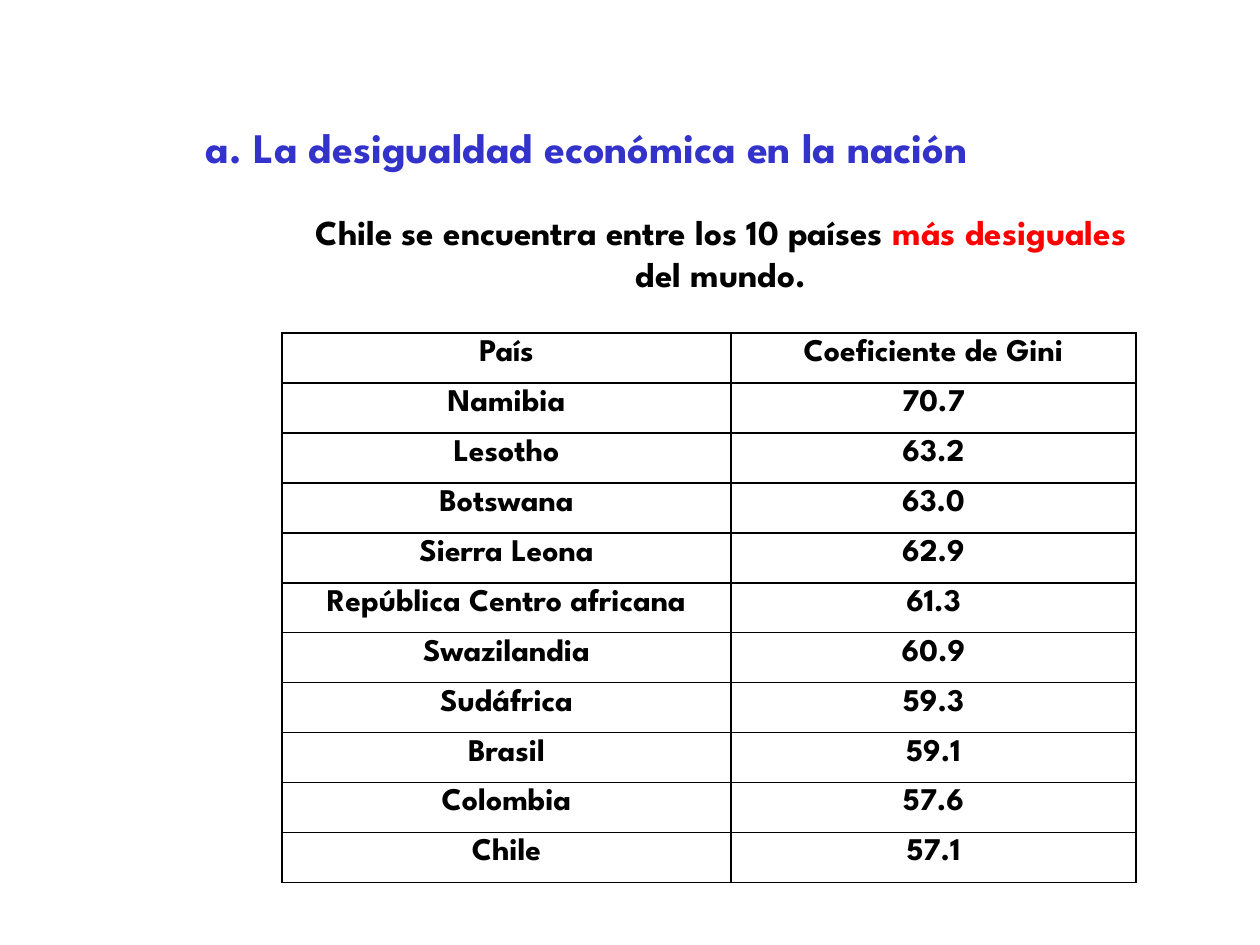
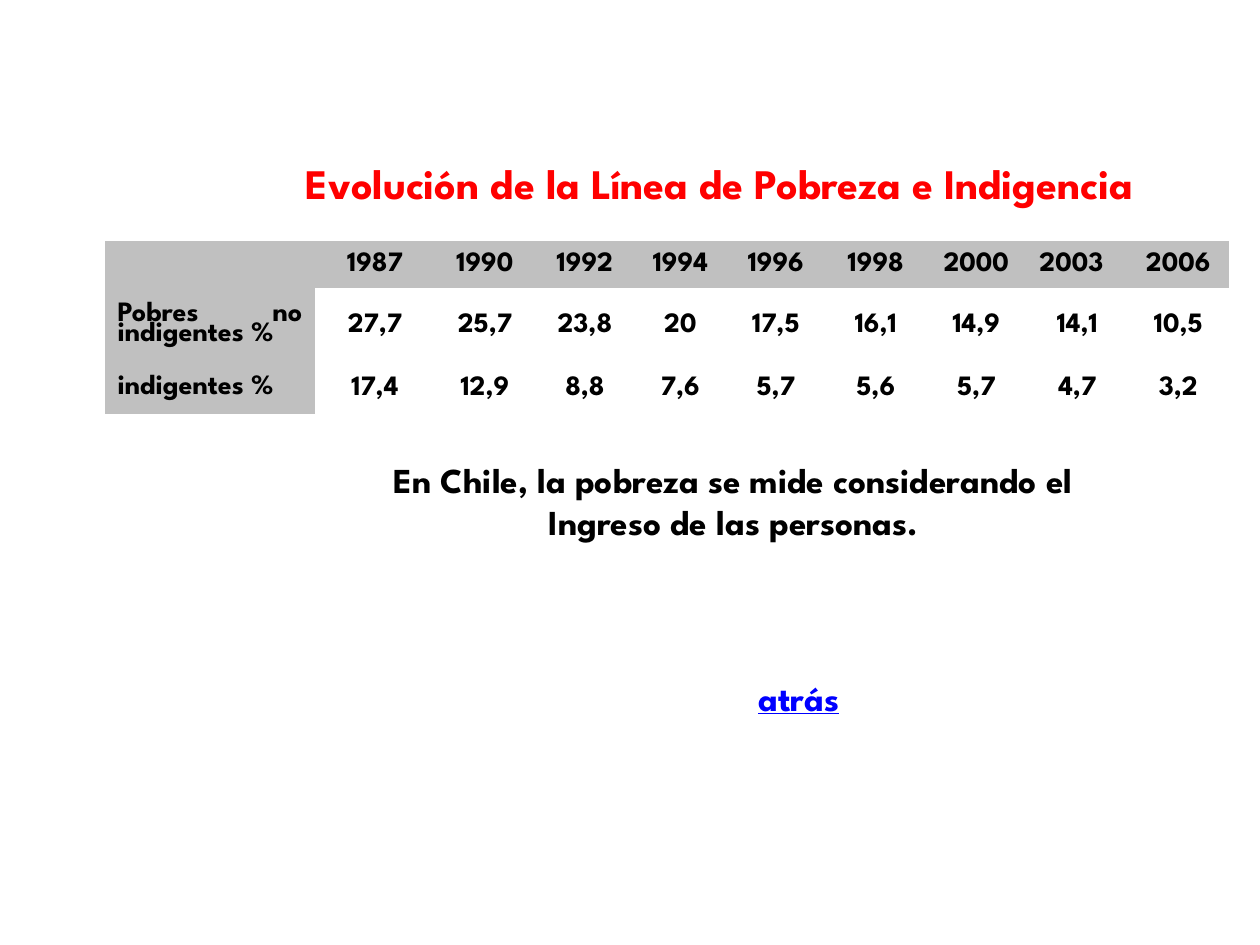
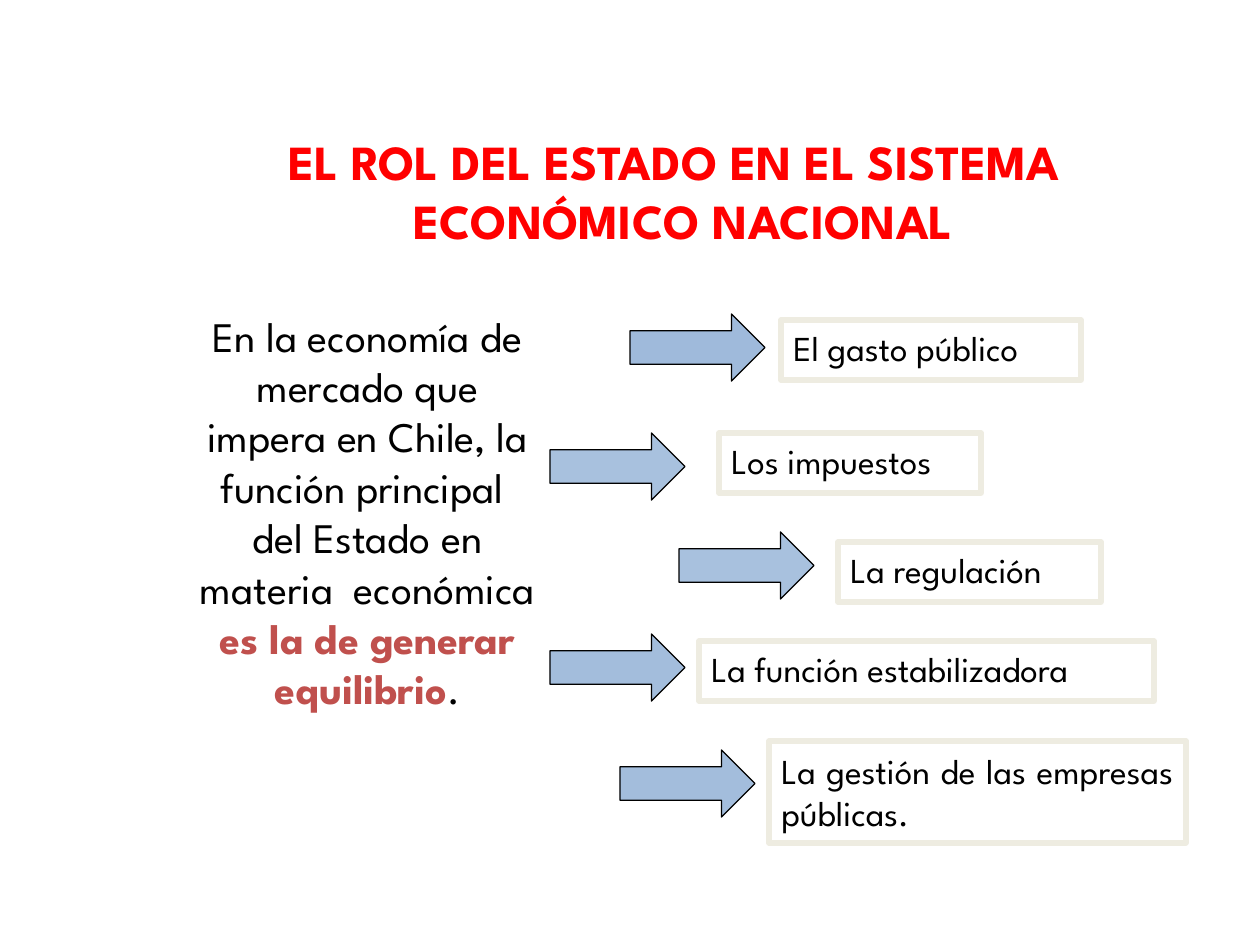
import pptx
import pptx.dml.color
import pptx.enum.shapes
import pptx.enum.text
import pptx.oxml
import pptx.oxml.ns
import pptx.util

ALIGN = pptx.enum.text.PP_ALIGN
ANCHOR = pptx.enum.text.MSO_ANCHOR
SHAPE = pptx.enum.shapes.MSO_SHAPE
LEFT, CENTER, JUSTIFY = ALIGN.LEFT, ALIGN.CENTER, ALIGN.JUSTIFY
TOP, MIDDLE = ANCHOR.TOP, ANCHOR.MIDDLE

# Shared look
FONT = "League Spartan"
BLACK, RED, INDIGO, LINK_BLUE = "000000", "FF0000", "3333CC", "0000FF"
GREY, CREAM, ARROW_BLUE, BRICK = "C0C0C0", "EEECE1", "4F81BD", "C0504D"
PX_PER_INCH = 126

# Content: a text is a list of paragraphs, a paragraph a list of (words, colour, format)
BOLD, PLAIN = {"bold": True}, {"bold": False}
LINK = {"bold": True, "underline": True}

INEQUALITY_TITLE = [[("La desigualdad económica en la nación", INDIGO, BOLD)]]
INEQUALITY_CLAIM = [
    [("Chile se encuentra entre los 10 países ", BLACK, BOLD), ("más desiguales", RED, BOLD)],
    [("del mundo.", BLACK, BOLD)],
]
GINI = [
    ("País", "Coeficiente de Gini"),
    ("Namibia", "70.7"),
    ("Lesotho", "63.2"),
    ("Botswana", "63.0"),
    ("Sierra Leona", "62.9"),
    ("República Centro africana", "61.3"),
    ("Swazilandia", "60.9"),
    ("Sudáfrica", "59.3"),
    ("Brasil", "59.1"),
    ("Colombia", "57.6"),
    ("Chile", "57.1"),
]

POVERTY_TITLE = [[("Evolución de la Línea de Pobreza e Indigencia", RED, BOLD)]]
POVERTY = [
    ("", "1987", "1990", "1992", "1994", "1996", "1998", "2000", "2003", "2006"),
    ("Pobres no indigentes %", "27,7", "25,7", "23,8", "20", "17,5", "16,1", "14,9", "14,1", "10,5"),
    ("indigentes %", "17,4", "12,9", "8,8", "7,6", "5,7", "5,6", "5,7", "4,7", "3,2"),
]
POVERTY_COLUMNS = (210, 120, 100, 100, 91, 100, 100, 101, 101, 101)
POVERTY_ROWS = (47, 75, 51)
POVERTY_NOTE = [
    [("En Chile, la pobreza se mide considerando el", BLACK, BOLD)],
    [("Ingreso de las personas.", BLACK, BOLD)],
]
BACK = [[("atrás", LINK_BLUE, LINK)]]

STATE_TITLE = [
    [("EL ROL DEL ESTADO EN EL SISTEMA", RED, BOLD)],
    [("ECONÓMICO NACIONAL", RED, BOLD)],
]
STATE_ROLE = [[
    ("En la economía de mercado que impera en Chile, la función principal  "
     "del Estado en materia  económica ", BLACK, PLAIN),
    ("es la de generar equilibrio", BRICK, BOLD),
    (".", BLACK, PLAIN),
]]
# Words, box place, arrow corner, arrow opacity in percent
STATE_TOOLS = [
    ("El gasto público", (781, 320, 300, 60), (630, 314), 54),
    ("Los impuestos", (719, 433, 262, 60), (550, 433), 49),
    ("La regulación", (838, 542, 263, 60), (679, 532), 49),
    ("La función estabilizadora", (699, 641, 455, 60), (550, 634), 52),
    ("La gestión de las empresas públicas.", (769, 741, 417, 102), (620, 750), 52),
]
ARROW_SIZE = (135, 67)


# Helpers
def px(length):
    return pptx.util.Emu(round(length * 914400 / PX_PER_INCH))


def rgb(colour):
    return pptx.dml.color.RGBColor.from_string(colour)


def assign(target, values):
    for name, value in values.items():
        setattr(target, name, value)


def add_xml(parent, tag, inner="", **attributes):
    listed = " ".join(f'{name}="{value}"' for name, value in attributes.items())
    namespace = pptx.oxml.ns.nsdecls("a")
    parent.append(pptx.oxml.parse_xml(f"<a:{tag} {namespace} {listed}>{inner}</a:{tag}>"))


def write(frame, paragraphs, size, align=CENTER, anchor=TOP):
    assign(frame, {"word_wrap": True, "vertical_anchor": anchor,
                   "auto_size": pptx.enum.text.MSO_AUTO_SIZE.NONE})
    for index, runs in enumerate(paragraphs):
        paragraph = frame.add_paragraph() if index else frame.paragraphs[0]
        paragraph.alignment = align
        for words, colour, style in runs:
            run = paragraph.add_run()
            run.text = words
            assign(run.font, {"name": FONT, "size": pptx.util.Pt(size), **style})
            run.font.color.rgb = rgb(colour)


def add_text(slide, place, paragraphs, size, align=CENTER):
    box = slide.shapes.add_textbox(*map(px, place))
    write(box.text_frame, paragraphs, size, align)


def add_titled_slide(deck, place, paragraphs, size, align=CENTER, anchor=MIDDLE):
    slide = deck.slides.add_slide(deck.slide_layouts[5])
    title = slide.shapes.title
    assign(title, dict(zip(("left", "top", "width", "height"), map(px, place))))
    write(title.text_frame, paragraphs, size, align, anchor)
    return slide


def set_borders(cell, width):
    line = f'<a:solidFill><a:srgbClr val="{BLACK}"/></a:solidFill>' if width else "<a:noFill/>"
    properties = cell._tc.get_or_add_tcPr()
    for side in ("lnL", "lnR", "lnT", "lnB"):
        add_xml(properties, side, line, w=pptx.util.Pt(width))


def add_grid(slide, corner, rows, widths, heights, size, border, anchor=TOP):
    grid = slide.shapes.add_table(
        len(rows), len(widths), *map(px, (*corner, sum(widths), sum(heights)))).table
    assign(grid, {"first_row": False, "horz_banding": False})
    for column, width in zip(grid.columns, widths):
        column.width = px(width)
    for row, height, words in zip(grid.rows, heights, rows):
        row.height = px(height)
        for cell, entry in zip(row.cells, words):
            if entry:
                write(cell.text_frame, [[(entry, BLACK, BOLD)]], size)
            else:
                assign(cell, {"margin_top": 0, "margin_bottom": 0})
            cell.vertical_anchor = anchor
            set_borders(cell, border)
            cell.fill.background()
    return grid


def add_outlined(slide, kind, place, colour, width):
    shape = slide.shapes.add_shape(kind, *map(px, place))
    shape.shadow.inherit = False
    shape.line.color.rgb = rgb(colour)
    shape.line.width = pptx.util.Pt(width)
    return shape


# Slides
def inequality_slide(deck):
    slide = add_titled_slide(deck, (193, 115, 942, 63), INEQUALITY_TITLE, 24, LEFT)
    properties = slide.shapes.title.text_frame.paragraphs[0]._p.get_or_add_pPr()
    assign_indent = {"marL": px(48), "indent": px(-48)}
    for name, value in assign_indent.items():
        properties.set(name, str(value))
    add_xml(properties, "buFont", typeface="+mj-lt")
    add_xml(properties, "buAutoNum", type="alphaLcPeriod")
    add_text(slide, (248, 204, 946, 97), INEQUALITY_CLAIM, 20)
    add_grid(slide, (282, 333), GINI, (449, 405), [50] * len(GINI), 18, 1)


def poverty_slide(deck):
    slide = add_titled_slide(deck, (233, 151, 973, 63), POVERTY_TITLE, 24)
    grid = add_grid(slide, (105, 241), POVERTY, POVERTY_COLUMNS, POVERTY_ROWS, 16, 0, MIDDLE)
    for row in range(len(POVERTY_ROWS)):
        for column in range(len(POVERTY_COLUMNS)):
            if row == 0 or column == 0:
                fill = grid.cell(row, column).fill
                fill.solid()
                fill.fore_color.rgb = rgb(GREY)
        if row:
            label = grid.cell(row, 0).text_frame.paragraphs[0]
            assign(label, {"alignment": JUSTIFY, "line_spacing": 0.8})
    year_2003 = grid.cell(0, POVERTY[0].index("2003"))
    year_2003.text_frame.paragraphs[0].alignment = LEFT
    add_text(slide, (333, 452, 801, 97), POVERTY_NOTE, 20)
    add_text(slide, (746, 670, 110, 54), BACK, 20, LEFT)


def state_slide(deck):
    slide = add_titled_slide(deck, (193, 125, 930, 130), STATE_TITLE, 28, anchor=TOP)
    for line, margin in zip(slide.shapes.title.text_frame.paragraphs, (32, 50)):
        line._p.get_or_add_pPr().set("marL", str(px(margin)))
    add_text(slide, (184, 304, 367, 515), STATE_ROLE, 24)
    for words, place, arrow_corner, opacity in STATE_TOOLS:
        tool = add_outlined(slide, SHAPE.RECTANGLE, place, CREAM, 3)
        tool.fill.background()
        two_lines = place[3] > 60
        write(tool.text_frame, [[(words, BLACK, PLAIN)]], 20,
              JUSTIFY if two_lines else LEFT, MIDDLE if two_lines else TOP)
        arrow = add_outlined(slide, SHAPE.RIGHT_ARROW, (*arrow_corner, *ARROW_SIZE), BLACK, 0.75)
        arrow.fill.solid()
        arrow.fill.fore_color.rgb = rgb(ARROW_BLUE)
        tint = arrow._element.spPr.find(pptx.oxml.ns.qn("a:solidFill"))[0]
        add_xml(tint, "alpha", val=opacity * 1000)


def main():
    deck = pptx.Presentation()
    assign(deck, {"slide_width": px(1260), "slide_height": px(945)})
    for build in (inequality_slide, poverty_slide, state_slide):
        build(deck)
    deck.save("out.pptx")


if __name__ == "__main__":
    main()
